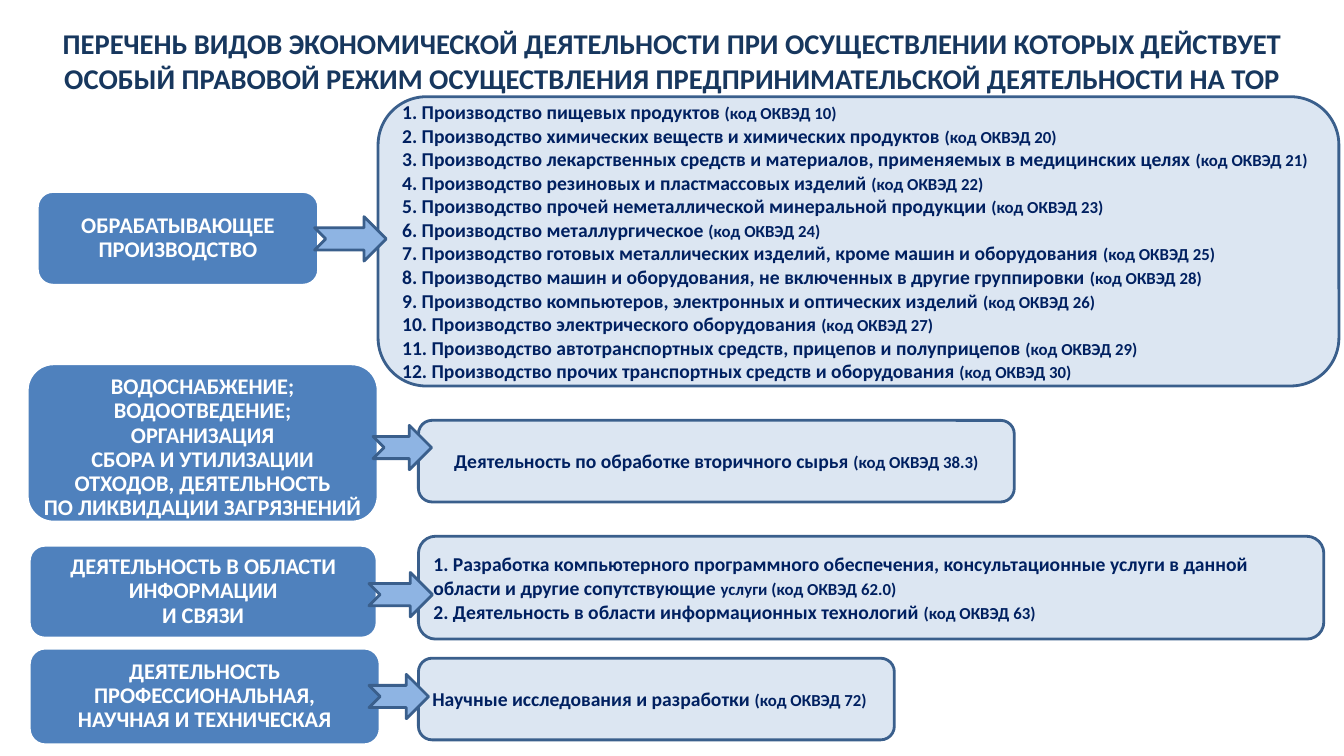
import pptx
import pptx.util
import pptx.dml.color
import pptx.enum.shapes
import pptx.enum.text

Inches = pptx.util.Inches
Pt = pptx.util.Pt
SHAPES = pptx.enum.shapes.MSO_SHAPE
ANCHORS = pptx.enum.text.MSO_ANCHOR
ALIGNS = pptx.enum.text.PP_ALIGN

TITLE = ("ПЕРЕЧЕНЬ ВИДОВ ЭКОНОМИЧЕСКОЙ ДЕЯТЕЛЬНОСТИ ПРИ ОСУЩЕСТВЛЕНИИ КОТОРЫХ ДЕЙСТВУЕТ "
         "ОСОБЫЙ ПРАВОВОЙ РЕЖИМ ОСУЩЕСТВЛЕНИЯ ПРЕДПРИНИМАТЕЛЬСКОЙ ДЕЯТЕЛЬНОСТИ НА ТОР")

MANUFACTURING = [
    ("1. Производство пищевых продуктов ", "(код ОКВЭД 10)"),
    ("2. Производство химических веществ и химических продуктов ", "(код ОКВЭД 20)"),
    ("3. Производство лекарственных средств и материалов, применяемых в медицинских целях ",
     "(код ОКВЭД 21)"),
    ("4. Производство резиновых и пластмассовых изделий ", "(код ОКВЭД 22)"),
    ("5. Производство прочей неметаллической минеральной продукции ", "(код ОКВЭД 23)"),
    ("6. Производство металлургическое ", "(код ОКВЭД 24)"),
    ("7. Производство готовых металлических изделий, кроме машин и оборудования ",
     "(код ОКВЭД 25)"),
    ("8. Производство машин и оборудования, не включенных в другие группировки ",
     "(код ОКВЭД 28)"),
    ("9. Производство компьютеров, электронных и оптических изделий ", "(код ОКВЭД 26)"),
    ("10. Производство электрического оборудования ", "(код ОКВЭД 27)"),
    ("11. Производство автотранспортных средств, прицепов и полуприцепов ", "(код ОКВЭД 29)"),
    ("12. Производство прочих транспортных средств и оборудования ", "(код ОКВЭД 30)"),
]
RECYCLING = [("Деятельность по обработке вторичного сырья ", "(код ОКВЭД 38.3)")]
INFORMATION = [
    ("1. Разработка компьютерного программного обеспечения, консультационные услуги в данной "
     "области и другие сопутствующие ", "услуги (код ОКВЭД 62.0)"),
    ("2. Деятельность в области информационных технологий ", "(код ОКВЭД 63)"),
]
RESEARCH = [("Научные исследования и разработки ", "(код ОКВЭД 72)")]

ROWS = [
    {"label": (0.37, 1.9, 2.79, 0.93), "lines": ["ОБРАБАТЫВАЮЩЕЕ ПРОИЗВОДСТВО"],
     "panel": (3.75, 0.96, 9.53, 2.87), "items": MANUFACTURING,
     "arrow": (3.12, 2.15, 0.71, 0.44)},
    {"label": (0.27, 3.61, 3.48, 1.57),
     "lines": ["ВОДОСНАБЖЕНИЕ; ВОДООТВЕДЕНИЕ; ОРГАНИЗАЦИЯ",
               "СБОРА И УТИЛИЗАЦИИ ОТХОДОВ, ДЕЯТЕЛЬНОСТЬ", "ПО ЛИКВИДАЦИИ ЗАГРЯЗНЕНИЙ"],
     "top_inset": 0.13, "panel": (4.15, 4.17, 5.91, 0.81), "items": RECYCLING,
     "align": ALIGNS.CENTER, "arrow": (3.7, 4.22, 0.58, 0.44)},
    {"label": (0.29, 5.41, 3.45, 0.92),
     "lines": ["ДЕЯТЕЛЬНОСТЬ В ОБЛАСТИ ИНФОРМАЦИИ", "И СВЯЗИ"],
     "panel": (4.15, 5.32, 8.98, 1.02), "items": INFORMATION,
     "arrow": (3.66, 5.68, 0.63, 0.44)},
    {"label": (0.29, 6.43, 3.48, 0.96),
     "lines": ["ДЕЯТЕЛЬНОСТЬ ПРОФЕССИОНАЛЬНАЯ,", "НАУЧНАЯ И ТЕХНИЧЕСКАЯ"],
     "panel": (4.15, 6.53, 4.72, 0.81), "items": RESEARCH,
     "arrow": (3.66, 6.69, 0.59, 0.44)},
]


def color(value):
    return pptx.dml.color.RGBColor.from_string(value)


def add_span(para, text, size, ink):
    span = para.add_run()
    span.text = text
    span.font.name = "Calibri"
    span.font.size = Pt(size)
    span.font.bold = True
    span.font.color.rgb = color(ink)


def add_box(page, kind, place, fill, line):
    box = page.shapes.add_shape(kind, *map(Inches, place))
    box.shadow.inherit = False
    box.fill.solid()
    box.fill.fore_color.rgb = color(fill)
    box.line.color.rgb = color(line)
    box.line.width = Pt(2)
    box.text_frame.word_wrap = True
    box.text_frame.vertical_anchor = ANCHORS.MIDDLE
    return box


def add_title(page, place):
    title = page.shapes.title
    title.left, title.top, title.width, title.height = map(Inches, place)
    frame = title.text_frame
    frame.word_wrap = True
    frame.auto_size = pptx.enum.text.MSO_AUTO_SIZE.NONE
    frame.vertical_anchor = ANCHORS.TOP
    para = frame.paragraphs[0]
    para.alignment = ALIGNS.CENTER
    add_span(para, TITLE, 20.4, "17375E")


def add_label(page, place, lines, top_inset):
    box = add_box(page, SHAPES.ROUNDED_RECTANGLE, place, "4F81BD", "FFFFFF")
    frame = box.text_frame
    frame.margin_left = frame.margin_right = Inches(0.07)
    frame.margin_top = Inches(top_inset)
    frame.margin_bottom = Inches(0.03)
    para = frame.paragraphs[0]
    para.alignment = ALIGNS.CENTER
    para.line_spacing = 0.9
    for index, line in enumerate(lines):
        if index:
            para.add_line_break()
        add_span(para, line, 16, "FFFFFF")


def add_panel(page, place, items, align):
    box = add_box(page, SHAPES.ROUNDED_RECTANGLE, place, "DCE6F2", "3A5F8C")
    frame = box.text_frame
    for index, (activity, code) in enumerate(items):
        para = frame.add_paragraph() if index else frame.paragraphs[0]
        para.alignment = align
        add_span(para, activity, 14, "002060")
        add_span(para, code, 12, "002060")


def add_row(page, row):
    add_label(page, row["label"], row["lines"], row.get("top_inset", 0.03))
    add_panel(page, row["panel"], row["items"], row.get("align", ALIGNS.LEFT))
    add_box(page, SHAPES.NOTCHED_RIGHT_ARROW, row["arrow"], "8EB4E3", "3A5F8C")


def main():
    deck = pptx.Presentation()
    deck.slide_width = Inches(13.33)
    deck.slide_height = Inches(7.5)
    page = deck.slides.add_slide(deck.slide_layouts[5])
    add_title(page, (0, 0.21, 13.33, 0.87))
    for row in ROWS:
        add_row(page, row)
    deck.save("out.pptx")


if __name__ == "__main__":
    main()
